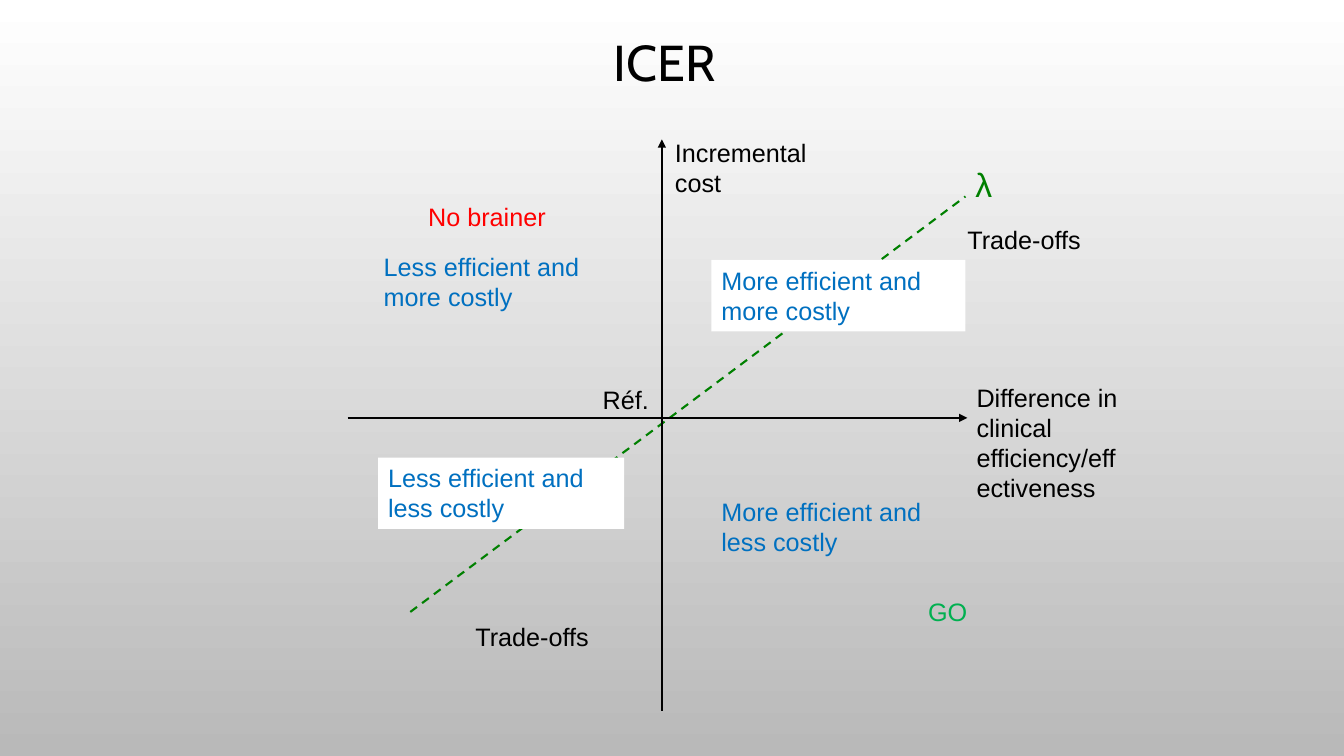
from pptx import Presentation
from pptx.dml.color import RGBColor
from pptx.enum.dml import MSO_LINE
from pptx.enum.shapes import MSO_CONNECTOR, MSO_SHAPE
from pptx.enum.text import MSO_ANCHOR, PP_ALIGN
from pptx.oxml.ns import qn
from pptx.util import Cm, Pt
from lxml.etree import SubElement

SIZE = (33.87, 19.05)
HUES = {"black": "000000", "white": "FFFFFF", "grey": "B9B9B9", "blue": "0070C0",
        "red": "FF0000", "lime": "00B050", "green": "008000"}
TITLE = ("ICER", (5.33, 0.05, 22.86, 3.18))
LIMIT = ((10.34, 15.42), (24.33, 4.95))
AXES = [((8.76, 10.53), (24.38, 10.53)), ((16.68, 17.91), (16.68, 3.51))]
AREAS = [
    ("More efficient and more costly", (17.93, 6.55, 6.4, 1.8), True),
    ("Less efficient and less costly", (9.53, 11.53, 6.2, 1.8), True),
    ("Less efficient and more costly", (9.42, 6.2, 6.4, 1.8), False),
    ("More efficient and less costly", (17.93, 12.37, 6.4, 1.8), False),
]
NOTES = [
    ("Incremental cost", (16.76, 3.33, 4.17, 1.8), "black", True),
    ("Difference in clinical efficiency/effectiveness", (24.36, 9.5, 4.17, 4.11), "black", True),
    ("Réf.", (14.94, 9.55, 1.8, 1.02), "black", True),
    ("Trade-offs", (24.13, 5.54, 3.4, 1.02), "black", False),
    ("Trade-offs", (11.73, 15.52, 3.4, 1.02), "black", False),
    ("No brainer", (10.54, 4.95, 3.51, 1.02), "red", False),
    ("GO", (23.14, 14.91, 1.52, 1.02), "lime", False),
]
LAMBDA = ("λ", (24.33, 4.01, 0.89, 1.3))


def rgb(hue):
    """Return the colour with the given name."""
    return RGBColor.from_string(HUES[hue])


def apply(item, values):
    """Set each named value on the item."""
    for name, value in values.items():
        setattr(item, name, value)


def write(shape, text, hue, size=18, face="Arial", wrap=True,
          anchor=MSO_ANCHOR.TOP, **para):
    """Fill a shape with one formatted paragraph."""
    frame = shape.text_frame
    apply(frame, {"word_wrap": wrap, "vertical_anchor": anchor})
    line = frame.paragraphs[0]
    apply(line, {"alignment": PP_ALIGN.LEFT, **para})
    run = line.add_run()
    run.text = text
    apply(run.font, {"name": face, "size": Pt(size)})
    run.font.color.rgb = rgb(hue)


def label(slide, text, place, hue, **style):
    """Add a text box at a place."""
    write(slide.shapes.add_textbox(*map(Cm, place)), text, hue, **style)


def panel(slide, text, place):
    """Add a white box with blue text."""
    box = slide.shapes.add_shape(MSO_SHAPE.RECTANGLE, *map(Cm, place))
    box.shadow.inherit = False
    box.fill.solid()
    box.fill.fore_color.rgb = rgb("white")
    box.line.fill.background()
    write(box, text, "blue")


def stroke(slide, ends, hue, dash=None):
    """Add a dashed line, or a solid arrow when no dash is given."""
    start, end = ends
    link = slide.shapes.add_connector(MSO_CONNECTOR.STRAIGHT, *map(Cm, start + end))
    link.line.color.rgb = rgb(hue)
    apply(link.line, {"width": Pt(1.5), "dash_style": dash})
    props = link._element.spPr
    if not dash:
        SubElement(props.find(qn("a:ln")), qn("a:tailEnd"), type="triangle")
    SubElement(props, qn("a:effectLst"))


def main():
    """Build the slide and save it."""
    deck = Presentation()
    apply(deck, dict(zip(("slide_width", "slide_height"), map(Cm, SIZE))))
    slide = deck.slides.add_slide(deck.slide_layouts[6])
    fill = slide.background.fill
    fill.gradient()
    fill.gradient_angle = 270
    for stop, hue in zip(fill.gradient_stops, ("white", "grey")):
        stop.color.rgb = rgb(hue)

    stroke(slide, LIMIT, "green", MSO_LINE.DASH)
    label(slide, *TITLE, "black", size=36, face="Cabin", anchor=MSO_ANCHOR.MIDDLE,
          alignment=PP_ALIGN.CENTER, line_spacing=0.9)
    for ends in AXES:
        stroke(slide, ends, "black")
    for text, place, boxed in AREAS:
        if boxed:
            panel(slide, text, place)
        else:
            label(slide, text, place, "blue")
    for text, place, hue, wrap in NOTES:
        label(slide, text, place, hue, wrap=wrap)
    label(slide, *LAMBDA, "green", size=24)
    deck.save("out.pptx")


if __name__ == "__main__":
    main()
